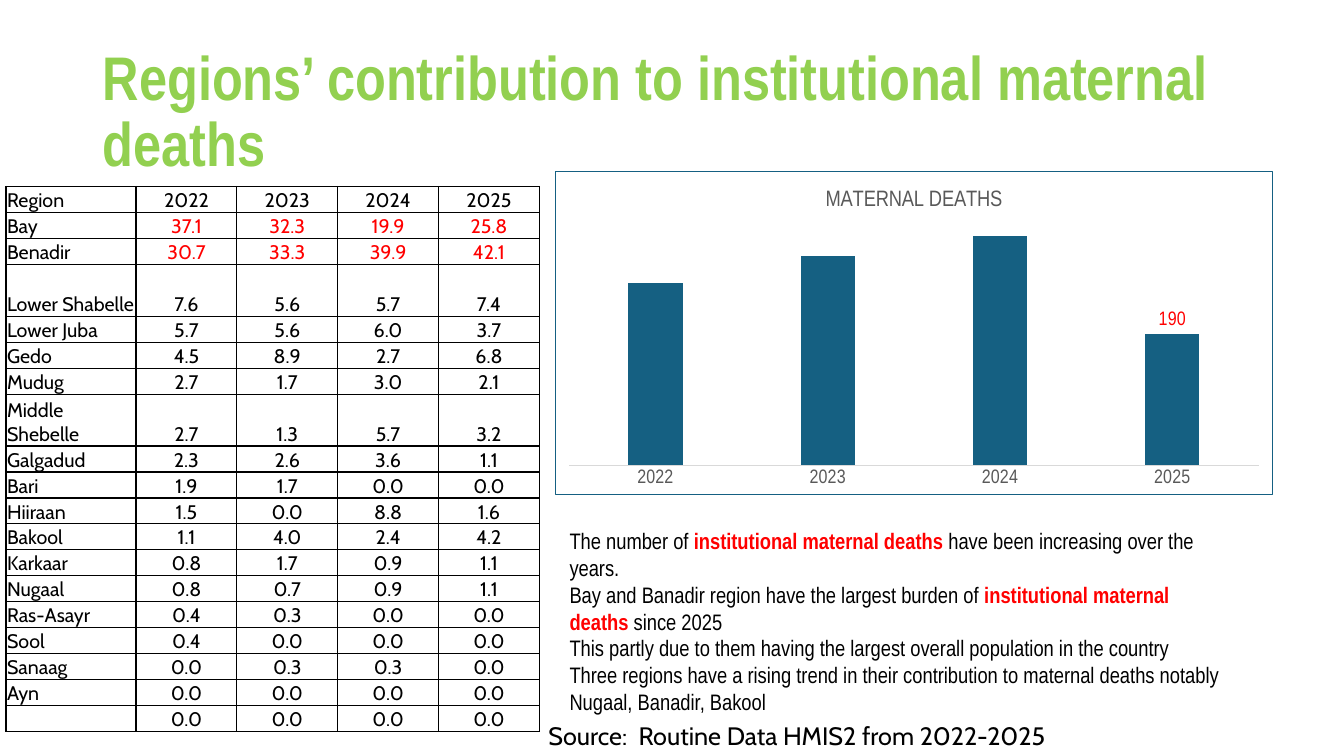
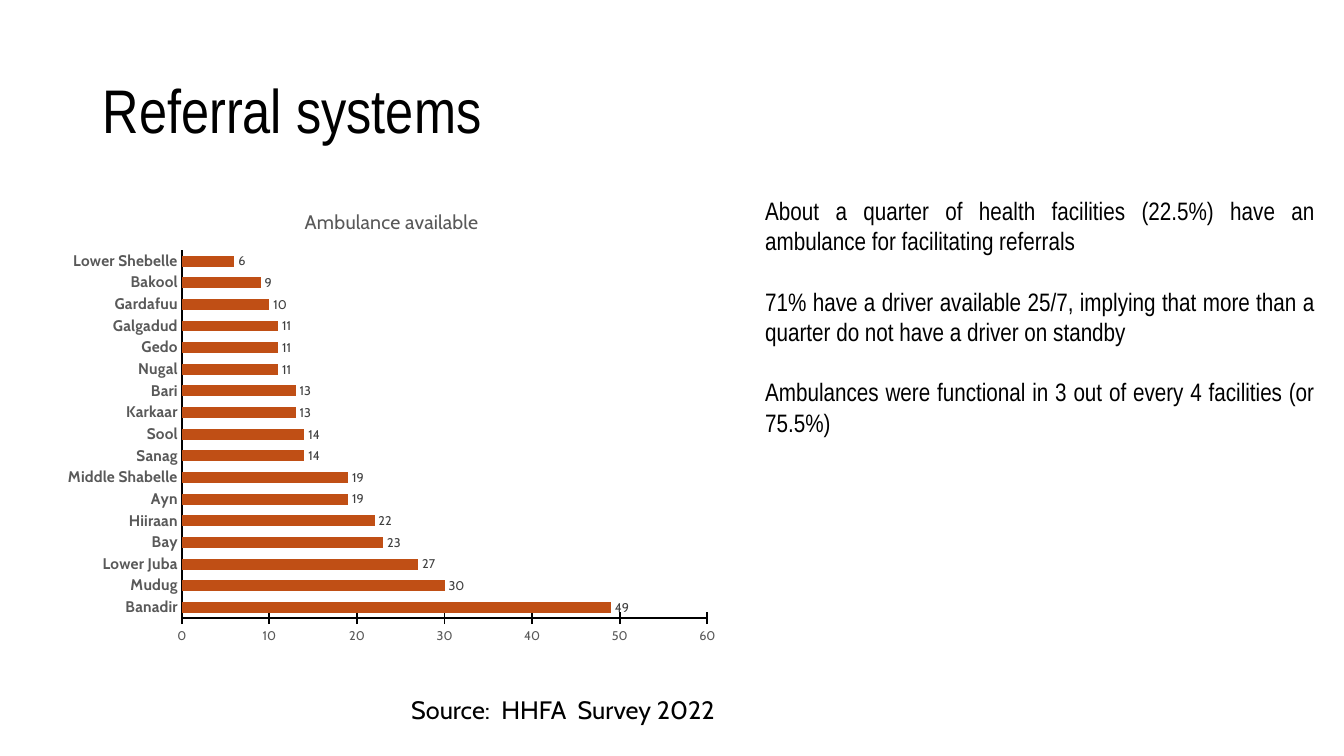
from dataclasses import dataclass

from lxml import etree
from pptx import Presentation
from pptx.chart.data import CategoryChartData
from pptx.dml.color import RGBColor
from pptx.enum.chart import XL_CHART_TYPE, XL_LABEL_POSITION, XL_TICK_MARK
from pptx.enum.text import MSO_ANCHOR, PP_ALIGN
from pptx.oxml import parse_xml
from pptx.oxml.ns import nsdecls, qn
from pptx.util import Inches, Pt

COLUMN, BAR = XL_CHART_TYPE.COLUMN_CLUSTERED, XL_CHART_TYPE.BAR_CLUSTERED
OUTSIDE_END = XL_LABEL_POSITION.OUTSIDE_END
NO_TICK, CROSS_TICK = XL_TICK_MARK.NONE, XL_TICK_MARK.CROSS
LEFT, CENTER, JUSTIFY = PP_ALIGN.LEFT, PP_ALIGN.CENTER, PP_ALIGN.JUSTIFY
MIDDLE, BOTTOM = MSO_ANCHOR.MIDDLE, MSO_ANCHOR.BOTTOM


@dataclass(frozen=True)
class Theme:
    narrow: str = "Arial Narrow"
    cabin: str = "Cabin"
    black: str = "000000"
    green: str = "92D050"
    red: str = "FF0000"
    blue: str = "156082"
    orange: str = "C04F15"
    grey: str = "595959"
    label: str = "404040"
    pale: str = "D9D9D9"
    title: int = 44
    body: int = 18
    findings: int = 16
    table: int = 14


T = Theme()

# Content: text pieces starting with * are emphasised
REGION_TITLE = "Regions’ contribution to institutional maternal deaths"
REGION_SOURCE = "Source:  Routine Data HMIS2 from 2022-2025"
YEARS = ["2022", "2023", "2024", "2025"]
DEATHS = [264, 303, 331, 190]
REGIONS = [
    ("Region", *YEARS),
    ("Bay", "37.1", "32.3", "19.9", "25.8"),
    ("Benadir", "30.7", "33.3", "39.9", "42.1"),
    ("Lower Shabelle", "7.6", "5.6", "5.7", "7.4"),
    ("Lower Juba", "5.7", "5.6", "6.0", "3.7"),
    ("Gedo", "4.5", "8.9", "2.7", "6.8"),
    ("Mudug", "2.7", "1.7", "3.0", "2.1"),
    ("Middle Shebelle", "2.7", "1.3", "5.7", "3.2"),
    ("Galgadud", "2.3", "2.6", "3.6", "1.1"),
    ("Bari", "1.9", "1.7", "0.0", "0.0"),
    ("Hiiraan", "1.5", "0.0", "8.8", "1.6"),
    ("Bakool", "1.1", "4.0", "2.4", "4.2"),
    ("Karkaar", "0.8", "1.7", "0.9", "1.1"),
    ("Nugaal", "0.8", "0.7", "0.9", "1.1"),
    ("Ras-Asayr", "0.4", "0.3", "0.0", "0.0"),
    ("Sool", "0.4", "0.0", "0.0", "0.0"),
    ("Sanaag", "0.0", "0.3", "0.3", "0.0"),
    ("Ayn", "0.0", "0.0", "0.0", "0.0"),
    ("", "0.0", "0.0", "0.0", "0.0"),
]
RED_REGIONS = {"Bay", "Benadir"}
TALL_REGIONS = {"Lower Shabelle", "Middle Shebelle"}
FINDINGS = [
    ["The number of ", "*institutional maternal deaths ",
     "have been increasing over the years."],
    ["Bay and Banadir region have the largest burden of ",
     "*institutional maternal deaths ", "since 2025"],
    ["This partly due to them having the largest overall population in the country"],
    ["Three regions have a rising trend in their contribution to maternal deaths "
     "notably Nugaal, Banadir, Bakool"],
]

REFERRAL_TITLE = "Referral systems"
REFERRAL_SOURCE = "Source:  HHFA  Survey 2022"
AMBULANCES = {
    "Banadir": 49, "Mudug": 30, "Lower Juba": 27, "Bay": 23, "Hiiraan": 22,
    "Ayn": 19, "Middle Shabelle": 19, "Sanag": 14, "Sool": 14, "Karkaar": 13,
    "Bari": 13, "Nugal": 11, "Gedo": 11, "Galgadud": 11, "Gardafuu": 10,
    "Bakool": 9, "Lower Shebelle": 6,
}
REFERRALS = [
    ["About a quarter of health facilities (22.5%) have an ambulance for "
     "facilitating referrals"],
    ["71% have a driver available 25/7, implying that more than a quarter do not "
     "have a driver on standby"],
    ["Ambulances were functional in 3 out of every 4 facilities (or 75.5%)"],
]


def style(font, face, size, color, bold=False):
    font.name, font.size, font.bold = face, Pt(size), bold
    font.color.rgb = RGBColor.from_string(color)


def add_text(s, box, paragraphs, face, size, color=T.black, bold=False,
             align=LEFT, gap=0):
    tf = s.shapes.add_textbox(*map(Inches, box)).text_frame
    tf.word_wrap = True
    for i, pieces in enumerate(paragraphs):
        p = tf.add_paragraph() if i else tf.paragraphs[0]
        p.alignment = align
        p.space_before = Pt(gap if i else 0)
        for piece in pieces:
            strong = piece.startswith("*")
            r = p.add_run()
            r.text = piece.lstrip("*")
            style(r.font, face, size, T.red if strong else color, bold or strong)
    return tf


def add_slide(prs, title, source, source_box, color=T.black, bold=False):
    s = prs.slides.add_slide(prs.slide_layouts[6])
    tf = add_text(s, (0.92, 0.4, 11.5, 1.45), [[title]], T.narrow, T.title,
                  color, bold)
    tf.vertical_anchor = MIDDLE
    tf.paragraphs[0].line_spacing = 0.9
    add_text(s, source_box, [[source]], T.cabin, T.body)
    return s


def set_line(line, color, width):
    line.color.rgb = RGBColor.from_string(color)
    line.width = Pt(width)


def add_bars(s, kind, box, title, cats, values, face, color, title_size,
             cat_size, label_size, gap, overlap=0, cat_bold=False, border=None):
    data = CategoryChartData(number_format="0")
    data.categories = cats
    data.add_series(title, values)
    chart = s.shapes.add_chart(kind, *map(Inches, box), data).chart
    chart.has_legend = False
    style(chart.font, face, label_size, T.black)

    # Title
    chart.has_title = True
    tf = chart.chart_title.text_frame
    tf.text = title
    style(tf.paragraphs[0].runs[0].font, face, title_size, T.grey)

    # Bars and value labels
    plot = chart.plots[0]
    plot.vary_by_categories = False
    plot.gap_width, plot.overlap = gap, overlap
    fill = plot.series[0].format.fill
    fill.solid()
    fill.fore_color.rgb = RGBColor.from_string(color)
    plot.has_data_labels = True
    labels = plot.data_labels
    labels.show_value = True
    labels.position = OUTSIDE_END
    labels.number_format, labels.number_format_is_linked = "0", False
    style(labels.font, face, label_size, T.label)

    # Axes
    axis = chart.category_axis
    axis.major_tick_mark = axis.minor_tick_mark = NO_TICK
    style(axis.tick_labels.font, face, cat_size, T.grey, cat_bold)
    chart.value_axis.has_major_gridlines = False
    chart.value_axis.minimum_scale = 0

    # Frame
    line = (f'<a:ln w="{Pt(0.75)}"><a:solidFill><a:srgbClr val="{border}"/>'
            "</a:solidFill></a:ln>" if border else "<a:ln><a:noFill/></a:ln>")
    frame = parse_xml(f'<c:spPr {nsdecls("c", "a")}><a:noFill/>{line}</c:spPr>')
    chart._chartSpace.find(qn("c:chart")).addnext(frame)
    return chart


def add_borders(cell, color=T.black, width=1):
    props = cell._tc.get_or_add_tcPr()
    for i, side in enumerate(("lnL", "lnR", "lnT", "lnB")):
        props.insert(i, parse_xml(
            f'<a:{side} {nsdecls("a")} w="{Pt(width)}"><a:solidFill>'
            f'<a:srgbClr val="{color}"/></a:solidFill></a:{side}>'))


def add_region_table(s, left, top, name_width, year_width, height):
    units = [2 if row[0] in TALL_REGIONS else 1 for row in REGIONS]
    widths = [name_width] + [year_width] * len(YEARS)
    table = s.shapes.add_table(len(REGIONS), len(widths), Inches(left), Inches(top),
                               Inches(sum(widths)), Inches(height)).table
    table.first_row = table.horz_banding = False
    for column, width in zip(table.columns, widths):
        column.width = Inches(width)
    for i, row in enumerate(REGIONS):
        table.rows[i].height = Inches(height * units[i] / sum(units))
        for j, text in enumerate(row):
            cell = table.cell(i, j)
            cell.margin_left = cell.margin_right = cell.margin_top = Inches(0.01)
            cell.margin_bottom = 0
            cell.vertical_anchor = BOTTOM
            cell.fill.background()
            add_borders(cell)
            p = cell.text_frame.paragraphs[0]
            p.alignment = CENTER if j else LEFT
            if text:
                p.text = text
                color = T.red if j and row[0] in RED_REGIONS else T.black
                style(p.runs[0].font, T.cabin, T.table, color)
            else:
                etree.SubElement(p._p, qn("a:endParaRPr"), sz=str(T.table * 100))


def region_slide(prs):
    s = add_slide(prs, REGION_TITLE, REGION_SOURCE, (5.34, 7.1, 6.09, 0.4),
                  T.green, True)
    chart = add_bars(s, COLUMN, (5.5, 1.7, 7.13, 3.21), "MATERNAL DEATHS", YEARS,
                     DEATHS, T.narrow, T.blue, title_size=16, cat_size=14,
                     label_size=14, gap=219, overlap=-27, border=T.blue)
    chart.value_axis.visible = False
    set_line(chart.category_axis.format.line, T.pale, 0.75)
    last = chart.plots[0].series[0].points[len(DEATHS) - 1].data_label
    style(last.font, T.narrow, 14, T.red)
    last.position = OUTSIDE_END
    add_text(s, (5.55, 5.18, 6.71, 1.99), FINDINGS, T.narrow, T.findings)
    add_region_table(s, 0.06, 1.85, 1.29, 1, 5.41)


def referral_slide(prs):
    s = add_slide(prs, REFERRAL_TITLE, REFERRAL_SOURCE, (3.98, 6.84, 7.22, 0.4))
    add_text(s, (7.49, 1.89, 5.65, 2.52), REFERRALS, T.narrow, T.body,
             align=JUSTIFY, gap=21.5)
    chart = add_bars(s, BAR, (0.54, 1.89, 6.69, 4.59), "Ambulance available",
                     list(AMBULANCES), list(AMBULANCES.values()), T.cabin, T.orange,
                     title_size=14, cat_size=11, label_size=9, gap=98, cat_bold=True)
    set_line(chart.category_axis.format.line, T.black, 1.5)
    axis = chart.value_axis
    axis.maximum_scale, axis.major_unit = 60, 10
    axis.major_tick_mark, axis.minor_tick_mark = CROSS_TICK, NO_TICK
    style(axis.tick_labels.font, T.cabin, 9, T.grey)
    set_line(axis.format.line, T.black, 1.25)


def main():
    prs = Presentation()
    prs.slide_width, prs.slide_height = Inches(13.33), Inches(7.5)
    region_slide(prs)
    referral_slide(prs)
    prs.save("out.pptx")


if __name__ == "__main__":
    main()
